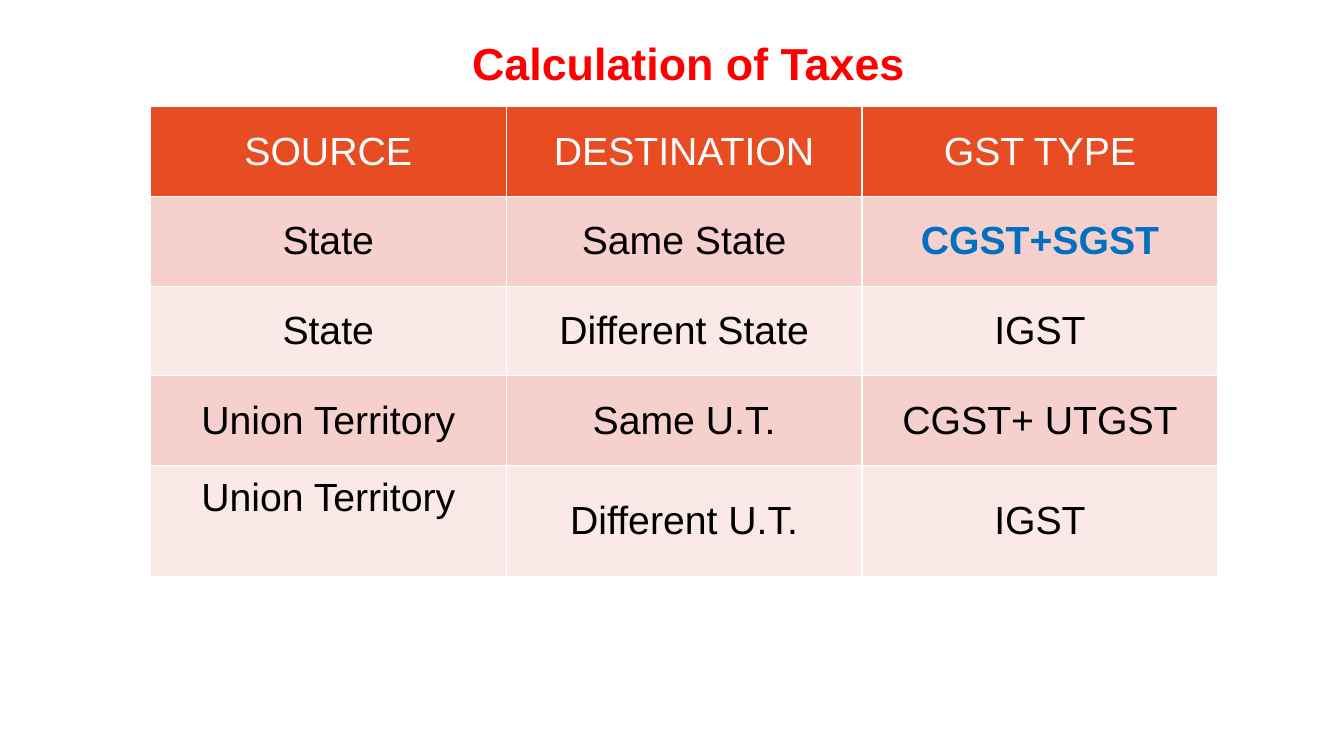
import pptx
import pptx.util
import pptx.dml.color
import pptx.enum.text

Inches = pptx.util.Inches
Pt = pptx.util.Pt
RGBColor = pptx.dml.color.RGBColor
PP_ALIGN = pptx.enum.text.PP_ALIGN
MSO_ANCHOR = pptx.enum.text.MSO_ANCHOR

RED = RGBColor(0xFF, 0x00, 0x00)
ORANGE = RGBColor(0xE8, 0x4C, 0x22)
PINK = RGBColor(0xF6, 0xD0, 0xCD)
PALE_PINK = RGBColor(0xFB, 0xE9, 0xE8)
BLUE = RGBColor(0x00, 0x70, 0xC0)
BLACK = RGBColor(0x00, 0x00, 0x00)
WHITE = RGBColor(0xFF, 0xFF, 0xFF)


def add_text(tf, text, size, color, bold):
    p = tf.paragraphs[0]
    p.alignment = PP_ALIGN.CENTER
    r = p.add_run()
    r.text = text
    r.font.name = "Arial"
    r.font.size = Pt(size)
    r.font.bold = bold
    r.font.color.rgb = color


prs = pptx.Presentation()
prs.slide_width = Inches(13.33)
prs.slide_height = Inches(7.5)
s = prs.slides.add_slide(prs.slide_layouts[5])

title = s.shapes.title
title.left, title.top = Inches(2.84), Inches(0.3)
title.width, title.height = Inches(7.98), Inches(0.64)
tf = title.text_frame
tf.word_wrap = True
tf.auto_size = pptx.enum.text.MSO_AUTO_SIZE.NONE
tf.vertical_anchor = MSO_ANCHOR.TOP
add_text(tf, "Calculation of Taxes", 32, RED, True)

rows = [
    ("SOURCE", "DESTINATION", "GST TYPE"),
    ("State", "Same State", "CGST+SGST"),
    ("State", "Different State", "IGST"),
    ("Union Territory", "Same U.T.", "CGST+ UTGST"),
    ("Union Territory", "Different U.T.", "IGST"),
]
heights = [0.89, 0.89, 0.89, 0.89, 1.1]

table = s.shapes.add_table(
    len(rows), 3, Inches(1.49), Inches(1.06), Inches(10.59), Inches(sum(heights))
).table
for column in table.columns:
    column.width = Inches(3.53)

for i, (row, height) in enumerate(zip(rows, heights)):
    table.rows[i].height = Inches(height)
    for j, text in enumerate(row):
        cell = table.cell(i, j)
        cell.vertical_anchor = MSO_ANCHOR.MIDDLE
        cell.fill.solid()
        cell.fill.fore_color.rgb = ORANGE if i == 0 else PINK if i % 2 else PALE_PINK
        highlighted = text == "CGST+SGST"
        color = WHITE if i == 0 else BLUE if highlighted else BLACK
        add_text(cell.text_frame, text, 28, color, highlighted)

last_source = table.cell(len(rows) - 1, 0)
last_source.vertical_anchor = MSO_ANCHOR.TOP
last_source.margin_top = Inches(0.1)

prs.save("out.pptx")
